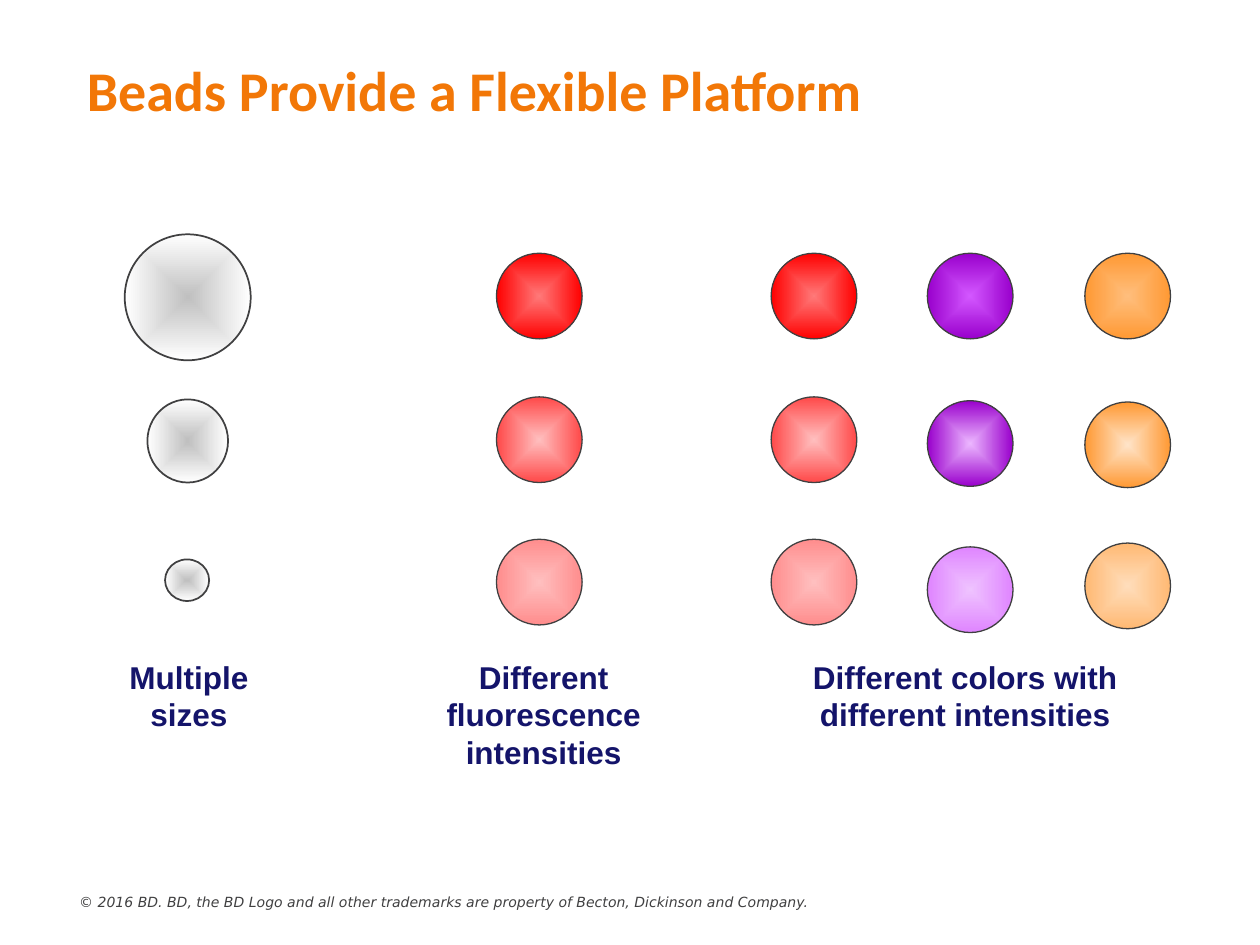
import pptx
import pptx.util
import pptx.oxml
import pptx.oxml.ns
import pptx.dml.color
import pptx.enum.shapes
import pptx.enum.text

RGBColor = pptx.dml.color.RGBColor
ORANGE = RGBColor(0xF2, 0x77, 0x07)
NAVY = RGBColor(0x14, 0x14, 0x6A)
CHARCOAL = RGBColor(0x40, 0x40, 0x41)
SILVER = RGBColor(0xC0, 0xC0, 0xC0)
WHITE = RGBColor(0xFF, 0xFF, 0xFF)
RED = RGBColor(0xFF, 0x00, 0x00)
RED_GLOW = RGBColor(0xFF, 0x79, 0x79)
MID_RED = RGBColor(0xFF, 0x49, 0x49)
PALE_RED = RGBColor(0xFF, 0x8D, 0x8D)
PINK = RGBColor(0xFF, 0xBF, 0xBF)
PURPLE = RGBColor(0x99, 0x00, 0xCC)
PURPLE_GLOW = RGBColor(0xD3, 0x57, 0xFF)
LILAC = RGBColor(0xEC, 0xB7, 0xFF)
PALE_PURPLE = RGBColor(0xDF, 0x85, 0xFF)
PALE_LILAC = RGBColor(0xEF, 0xC3, 0xFF)
AMBER = RGBColor(0xFF, 0x99, 0x33)
AMBER_GLOW = RGBColor(0xFF, 0xBE, 0x7D)
CREAM = RGBColor(0xFF, 0xE4, 0xC9)
PALE_AMBER = RGBColor(0xFF, 0xB9, 0x73)
PEACH = RGBColor(0xFF, 0xDD, 0xBB)

PX = 9144
CENTER = pptx.enum.text.PP_ALIGN.CENTER
LEFT = pptx.enum.text.PP_ALIGN.LEFT
TOP = pptx.enum.text.MSO_ANCHOR.TOP
MIDDLE = pptx.enum.text.MSO_ANCHOR.MIDDLE

deck = pptx.Presentation()
deck.slide_width = 1000 * PX
deck.slide_height = 750 * PX
slide = deck.slides.add_slide(deck.slide_layouts[6])


def add_text(text, *, left, top, width, height, size=18, font="Arial", color=NAVY,
             bold=True, italic=False, align=CENTER, anchor=TOP):
    box = slide.shapes.add_textbox(left * PX, top * PX, width * PX, height * PX)
    frame = box.text_frame
    frame.word_wrap = True
    frame.vertical_anchor = anchor
    frame.text = text
    for paragraph in frame.paragraphs:
        paragraph.alignment = align
        paragraph.font.size = pptx.util.Pt(size)
        paragraph.font.name = font
        paragraph.font.bold = bold
        paragraph.font.italic = italic
        paragraph.font.color.rgb = color


def add_bead(left, top, width, height, core, rim, outline):
    bead = slide.shapes.add_shape(pptx.enum.shapes.MSO_SHAPE.OVAL,
                                  left * PX, top * PX, width * PX, height * PX)
    bead.shadow.inherit = False
    bead.fill.gradient()
    for stop, color in zip(bead.fill.gradient_stops, (core, rim)):
        stop.color.rgb = color
    linear = bead.element.spPr.find(".//" + pptx.oxml.ns.qn("a:lin"))
    radial = pptx.oxml.parse_xml(
        f'<a:path {pptx.oxml.ns.nsdecls("a")} path="shape">'
        '<a:fillToRect l="50000" t="50000" r="50000" b="50000"/></a:path>')
    linear.getparent().replace(linear, radial)
    bead.line.color.rgb = CHARCOAL
    bead.line.width = pptx.util.Pt(outline)


add_text("Beads Provide a Flexible Platform", left=59, top=25, width=678, height=92,
         size=32, font="Calibri", color=ORANGE, align=LEFT, anchor=MIDDLE)

for left, top, width, height in [(99, 186, 100, 100), (117, 317, 64, 66), (131, 444, 35, 33)]:
    add_bead(left, top, width, height, SILVER, WHITE, 1)

reds = [(201, RED_GLOW, RED), (315, PINK, MID_RED), (428, PINK, PALE_RED)]
purples = [(201, PURPLE_GLOW, PURPLE), (318, LILAC, PURPLE), (434, PALE_LILAC, PALE_PURPLE)]
ambers = [(201, AMBER_GLOW, AMBER), (319, CREAM, AMBER), (431, PEACH, PALE_AMBER)]
for left, beads in [(394, reds), (612, reds), (736, purples), (861, ambers)]:
    for top, core, rim in beads:
        add_bead(left, top, 68, 68, core, rim, 0)

captions = [
    ("Multiple sizes", 78, 144, 70),
    ("Different fluorescence\nintensities", 321, 221, 100),
    ("Different colors with different intensities", 620, 292, 70),
]
for caption, left, width, height in captions:
    add_text(caption, left=left, top=517, width=width, height=height)

add_text("© 2016 BD. BD, the BD Logo and all other trademarks are property of "
         "Becton, Dickinson and Company.", left=53, top=704, width=700, height=23,
         size=8, font="DejaVu Sans", color=CHARCOAL, bold=False, italic=True, align=LEFT)

deck.save("out.pptx")
